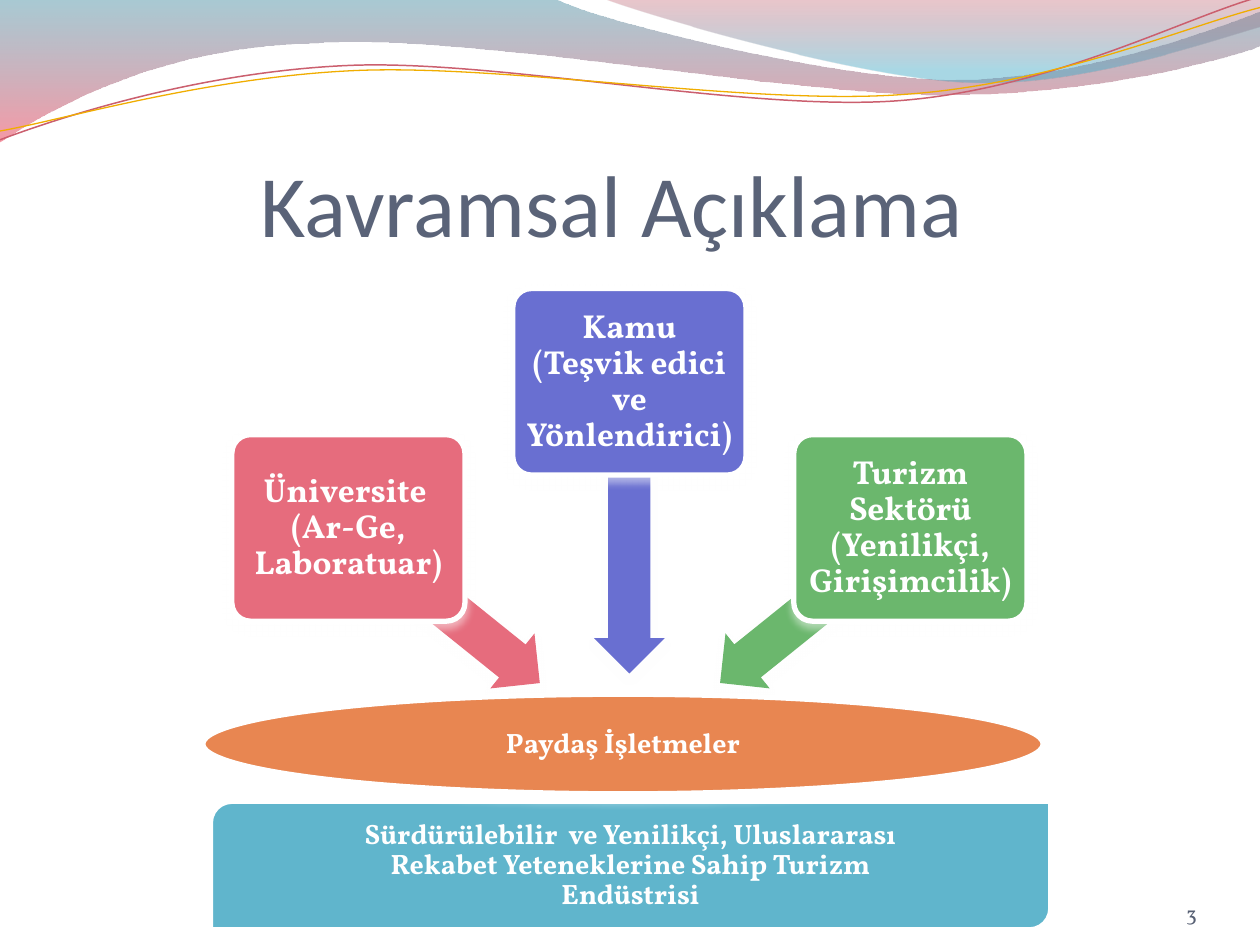
from pptx import Presentation
from pptx.dml.color import RGBColor
from pptx.enum.shapes import MSO_SHAPE
from pptx.enum.text import MSO_ANCHOR, PP_ALIGN
from pptx.oxml import parse_xml
from pptx.oxml.ns import nsdecls, qn
from pptx.util import Inches, Pt

SERIF = "Vollkorn"
WHITE = "FFFFFF"

# Background waves: a start point, then cubic curves (6 numbers) or lines (2)
LEFT_WAVE = [(0, 0), (4.4, -0.01), (4.76, 0.17, 6.64, 0.63, 7.58, 0.63),
             (8.53, 0.63, 9.58, 0.26, 10, 0.09), (10.01, 0.36),
             (9.83, 0.44, 8.7, 0.76, 7.46, 0.75),
             (6.22, 0.75, 3.82, 0.28, 2.57, 0.34),
             (1.29, 0.36, 0.46, 0.83, -0.01, 1.13)]
RIGHT_WAVE = [(4.79, -0.01), (5.09, 0.11, 6.82, 0.62, 7.69, 0.65),
              (8.56, 0.69, 9.61, 0.32, 10, 0.21), (10, 0)]
RED_STRAND = [(0, 1.11), (0.48, 0.93, 1.58, 0.57, 2.77, 0.52),
              (3.95, 0.47, 5.93, 0.89, 7.13, 0.8),
              (8.33, 0.71, 9.38, 0.15, 9.98, -0.02)]
GOLD_STRAND = [(0, 1.04), (0.47, 0.96, 1.64, 0.61, 2.83, 0.56),
               (4.03, 0.51, 5.97, 0.84, 7.17, 0.75),
               (8.36, 0.67, 9.41, 0.21, 10, 0.06)]

# Stakeholders: text, box left, box top, arrow left, top, length, turn, colour
STAKEHOLDERS = [
    ("Üniversite \v(Ar-Ge, Laboratuar)", 1.84, 3.45, 2.55, 4.53, 1.95, 218.8, "E66C7D"),
    ("Kamu\v(Teşvik edici ve Yönlendirici)", 4.07, 2.29, 3.84, 3.91, 2.31, 270, "696FD1"),
    ("Turizm Sektörü (Yenilikçi, Girişimcilik)", 6.3, 3.45, 5.5, 4.53, 1.95, 321.2, "6BB76D"),
]


def color(hex_value):
    return RGBColor.from_string(hex_value)


def bend_segments(outline, path):
    """Join each three segments that hold a curve's points into one cubic curve."""
    segments = iter(list(outline.element.iter(qn("a:lnTo"))))
    for step in path[1:]:
        parts = [next(segments) for _ in range(len(step) // 2)]
        if len(parts) == 3:
            curve = parse_xml(f'<a:cubicBezTo {nsdecls("a")}/>')
            parts[0].addprevious(curve)
            for part in parts:
                curve.append(part[0])
                part.getparent().remove(part)


def add_outline(slide, path, close):
    points = [(Inches(step[i]), Inches(step[i + 1]))
              for step in path for i in range(0, len(step), 2)]
    builder = slide.shapes.build_freeform(*points[0])
    builder.add_line_segments(points[1:], close=close)
    outline = builder.convert_to_shape()
    bend_segments(outline, path)
    outline.shadow.inherit = False
    outline.fill.background()
    return outline


def add_wave(slide, path, stops):
    wave = add_outline(slide, path, True)
    wave.line.fill.background()
    stop_xml = "".join(
        f'<a:gs pos="{pos * 1000}"><a:srgbClr val="{hex_value}">'
        f'<a:alpha val="{alpha * 1000}"/></a:srgbClr></a:gs>'
        for pos, hex_value, alpha in stops)
    gradient = parse_xml(
        f'<a:gradFill {nsdecls("a")} rotWithShape="1"><a:gsLst>{stop_xml}</a:gsLst>'
        '<a:lin ang="5400000" scaled="0"/></a:gradFill>')
    properties = wave.element.spPr
    properties.replace(properties.find(qn("a:noFill")), gradient)


def add_strand(slide, path, hex_value, width):
    strand = add_outline(slide, path, False)
    strand.line.color.rgb = color(hex_value)
    strand.line.width = Pt(width)


def add_soft_shadow(shape):
    shape.shadow.inherit = False
    shape.element.spPr.find(qn("a:effectLst")).append(parse_xml(
        f'<a:outerShdw {nsdecls("a")} blurRad="{Pt(4.5)}" dist="{Pt(3)}" '
        'dir="5400000" rotWithShape="0"><a:srgbClr val="FFFFFF">'
        '<a:alpha val="48000"/></a:srgbClr></a:outerShdw>'))


def write(shape, text, size, font, hex_value, align, anchor, margins, bold=False):
    frame = shape.text_frame
    frame.word_wrap = True
    frame.vertical_anchor = anchor
    (frame.margin_left, frame.margin_top,
     frame.margin_right, frame.margin_bottom) = map(Inches, margins)
    frame.text = text
    paragraph = frame.paragraphs[0]
    paragraph.alignment = align
    for run in paragraph.runs:
        run.font.size = Pt(size)
        run.font.name = font
        run.font.bold = bold
        run.font.color.rgb = color(hex_value)
    return paragraph


def add_block(slide, preset, place, hex_value):
    block = slide.shapes.add_shape(preset, *map(Inches, place))
    block.fill.solid()
    block.fill.fore_color.rgb = color(hex_value)
    block.line.fill.background()
    add_soft_shadow(block)
    return block


def add_label_block(slide, preset, place, hex_value, text, size, margins):
    block = add_block(slide, preset, place, hex_value)
    block.line.color.rgb = color(WHITE)
    block.line.width = Pt(3)
    paragraph = write(block, text, size, SERIF, WHITE, PP_ALIGN.CENTER,
                      MSO_ANCHOR.MIDDLE, margins, bold=True)
    paragraph.line_spacing = 0.9
    return block


def add_arrow(slide, left, top, length, turn, hex_value):
    arrow = add_block(slide, MSO_SHAPE.LEFT_ARROW, (left, top, length, 0.56), hex_value)
    arrow.adjustments[0] = 0.6
    arrow.adjustments[1] = 0.5
    arrow.rotation = turn


def add_text(slide, place, *style):
    write(slide.shapes.add_textbox(*map(Inches, place)), *style)


def main():
    deck = Presentation()
    deck.slide_width, deck.slide_height = Inches(10), Inches(7.5)
    slide = deck.slides.add_slide(deck.slide_layouts[6])

    # Waves across the top
    add_wave(slide, LEFT_WAVE, [(0, "3F8A9F", 45), (100, "EF445B", 55)])
    add_wave(slide, RIGHT_WAVE, [(0, "B84253", 30), (80, "42ABC7", 45)])
    add_strand(slide, RED_STRAND, "CB5F6E", 0.85)
    add_strand(slide, GOLD_STRAND, "F0AD00", 0.75)

    # Title
    add_text(slide, (0.5, 0.77, 9, 1.25), "Kavramsal Açıklama", 50, "Calibri",
             "5A6378", PP_ALIGN.LEFT, MSO_ANCHOR.BOTTOM, (1.57, 0.05, 0, 0))

    # Outcome, stakeholders with their arrows, and the shared ellipse
    wide_margins = (0.99, 0.16, 0.99, 0.16)
    add_label_block(
        slide, MSO_SHAPE.ROUND_2_DIAG_RECTANGLE, (1.67, 6.36, 6.67, 1.02), "60B5CC",
        "Sürdürülebilir  ve Yenilikçi, Uluslararası Rekabet Yeteneklerine "
        "Sahip Turizm Endüstrisi", 16, wide_margins)
    for text, left, top, *arrow, hex_value in STAKEHOLDERS:
        add_arrow(slide, *arrow, hex_value)
        box = add_label_block(slide, MSO_SHAPE.ROUNDED_RECTANGLE,
                              (left, top, 1.85, 1.48), hex_value, text, 19, (0.03,) * 4)
        box.adjustments[0] = 0.1
    add_label_block(slide, MSO_SHAPE.OVAL, (1.61, 5.51, 6.67, 0.79), "E88651",
                    "Paydaş İşletmeler", 16, (0, 0.04, 0, 0.04))

    # Slide number
    add_text(slide, (8.67, 6.95, 0.83, 0.4), "3", 12, SERIF, "565F73",
             PP_ALIGN.RIGHT, MSO_ANCHOR.BOTTOM, (0,) * 4)

    deck.save("out.pptx")


if __name__ == "__main__":
    main()
